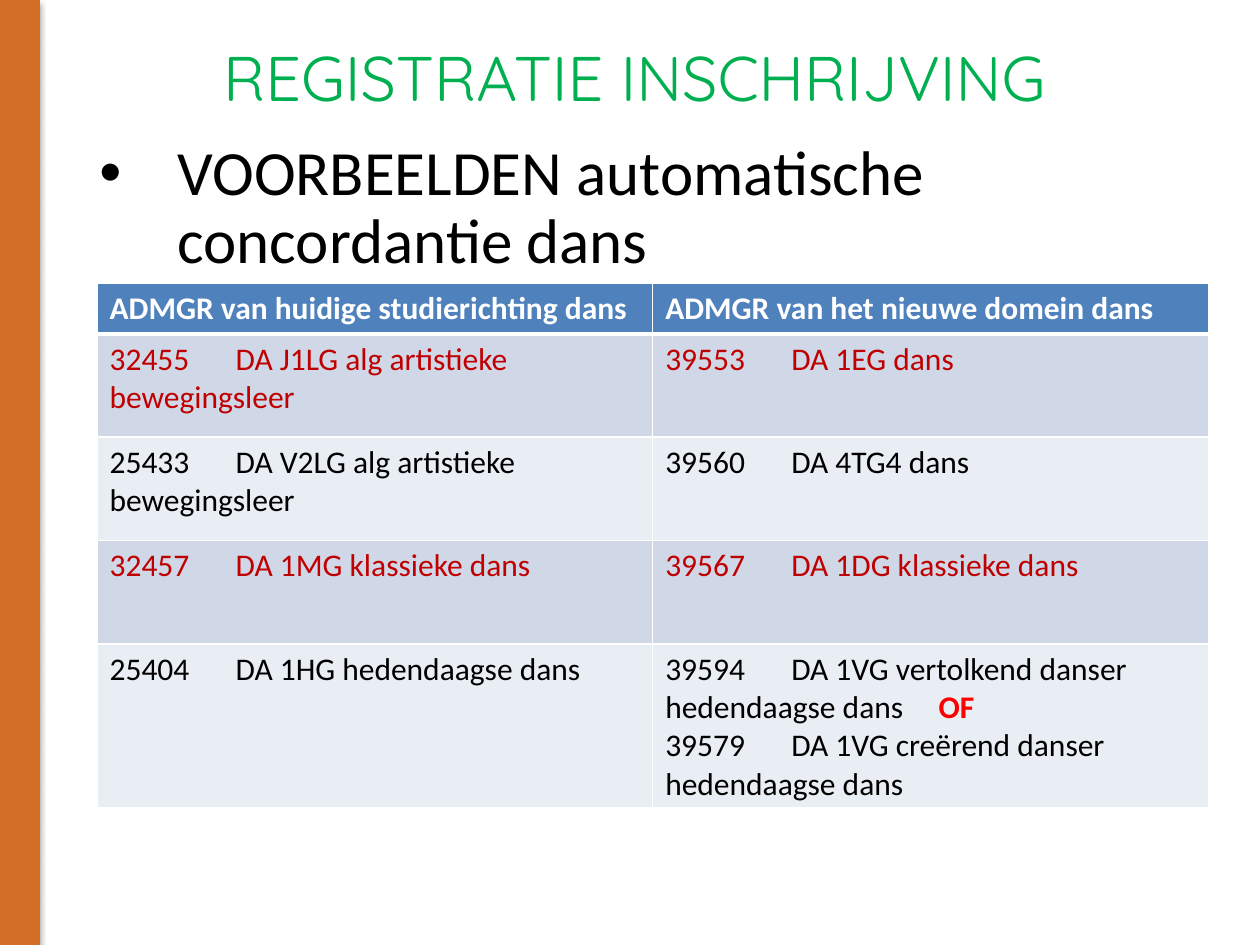
import pptx
import pptx.dml.color
import pptx.enum.shapes
import pptx.enum.text
import pptx.oxml
import pptx.oxml.ns
import pptx.util
from pptx.util import Inches
from dataclasses import dataclass


@dataclass(frozen=True)
class Theme:
    orange: str = "D26E25"
    green: str = "00B050"
    black: str = "000000"
    white: str = "FFFFFF"
    dark_red: str = "C00000"
    red: str = "FF0000"
    header: str = "4F81BD"
    bands: tuple = ("D0D8E8", "E9EDF4")
    title_font: str = "Quicksand"
    body_font: str = "Calibri"
    large: int = 36
    small: int = 18


theme = Theme()


def add_xml(parent, xml):
    wrapper = pptx.oxml.parse_xml(f"<a:wrapper {pptx.oxml.ns.nsdecls('a')}>{xml}</a:wrapper>")
    for element in list(wrapper):
        parent.append(element)


def style_run(run, size, color, bold=False, name=theme.body_font):
    run.font.size = pptx.util.Pt(size)
    run.font.name = name
    run.font.bold = bold
    run.font.color.rgb = pptx.dml.color.RGBColor.from_string(color)


presentation = pptx.Presentation()
presentation.slide_width = Inches(10)
presentation.slide_height = Inches(7.5)
slide = presentation.slides.add_slide(presentation.slide_layouts[6])

# Orange side bar with a soft shadow
bar = slide.shapes.add_shape(
    pptx.enum.shapes.MSO_SHAPE.RECTANGLE, 0, 0, Inches(0.31), Inches(7.5))
bar.fill.solid()
bar.fill.fore_color.rgb = pptx.dml.color.RGBColor.from_string(theme.orange)
bar.line.color.rgb = bar.fill.fore_color.rgb
bar.line.width = pptx.util.Pt(0.75)
add_xml(bar.element.spPr, '<a:effectLst><a:outerShdw blurRad="39370" dist="22860" dir="5400000" '
        f'rotWithShape="0"><a:srgbClr val="{theme.black}"><a:alpha val="35000"/></a:srgbClr>'
        '</a:outerShdw></a:effectLst>')

# Title
title = slide.shapes.add_textbox(Inches(0.98), Inches(0.21), Inches(8.11), Inches(0.79))
title.text_frame.word_wrap = True
title.text_frame.vertical_anchor = pptx.enum.text.MSO_ANCHOR.MIDDLE
title.text_frame.text = "REGISTRATIE INSCHRIJVING"
paragraph = title.text_frame.paragraphs[0]
paragraph.alignment = pptx.enum.text.PP_ALIGN.CENTER
style_run(paragraph.runs[0], theme.large, theme.green, name=theme.title_font)

# Bullet line
body = slide.shapes.add_textbox(Inches(0.69), Inches(1.07), Inches(8.9), Inches(5.2))
body.text_frame.word_wrap = True
body.text_frame.margin_bottom = 0
body.text_frame.text = "VOORBEELDEN automatische concordantie dans"
paragraph = body.text_frame.paragraphs[0]
paragraph.line_spacing = 0.9
properties = paragraph._p.get_or_add_pPr()
properties.set("marL", str(Inches(0.62)))
properties.set("indent", str(-Inches(0.62)))
add_xml(properties, '<a:buFont typeface="Arial"/><a:buChar char="•"/>')
style_run(paragraph.runs[0], theme.large, theme.black)

# Concordance table: each cell is a list of paragraphs
rows = [
    (["ADMGR van huidige studierichting dans"], ["ADMGR van het nieuwe domein dans"]),
    (["32455\tDA J1LG alg artistieke bewegingsleer"], ["39553\tDA 1EG dans"]),
    (["25433\tDA V2LG alg artistieke bewegingsleer"], ["39560\tDA 4TG4 dans"]),
    (["32457\tDA 1MG klassieke dans"], ["39567\tDA 1DG klassieke dans"]),
    (["25404\tDA 1HG hedendaagse dans"],
     ["39594\tDA 1VG vertolkend danser hedendaagse dans\t",
      "39579\tDA 1VG creërend danser hedendaagse dans"]),
]
table = slide.shapes.add_table(
    len(rows), 2, Inches(0.77), Inches(2.25), Inches(8.82), Inches(3.63)).table
table.first_row = False
table.horz_banding = False
for column in table.columns:
    column.width = Inches(4.41)

for row_index, row in enumerate(rows):
    is_header = row_index == 0
    table.rows[row_index].height = Inches(0.35 if is_header else 0.82)
    if is_header:
        fill, color = theme.header, theme.white
    else:
        fill = theme.bands[(row_index - 1) % 2]
        color = theme.dark_red if row_index % 2 else theme.black

    for column_index, lines in enumerate(row):
        cell = table.cell(row_index, column_index)
        cell_properties = cell._tc.get_or_add_tcPr()
        for side in "LRTB":
            thick = (is_header and side == "B") or (row_index == 1 and side == "T")
            width = pptx.util.Pt(3 if thick else 1)
            add_xml(cell_properties, f'<a:ln{side} w="{width}"><a:solidFill>'
                    f'<a:srgbClr val="{theme.white}"/></a:solidFill></a:ln{side}>')
        cell.fill.solid()
        cell.fill.fore_color.rgb = pptx.dml.color.RGBColor.from_string(fill)

        cell.text_frame.text = "\n".join(lines)
        for paragraph in cell.text_frame.paragraphs:
            add_xml(paragraph._p.get_or_add_pPr(),
                    f'<a:tabLst><a:tab pos="{Inches(1)}" algn="l"/>'
                    f'<a:tab pos="{Inches(2.17)}" algn="l"/></a:tabLst>')
            style_run(paragraph.runs[0], theme.small, color, bold=is_header)

# Highlighted "or" between the two options of the last row
choice = table.cell(len(rows) - 1, 1).text_frame.paragraphs[0].add_run()
choice.text = "OF"
style_run(choice, theme.small, theme.red, bold=True)

presentation.save("out.pptx")
